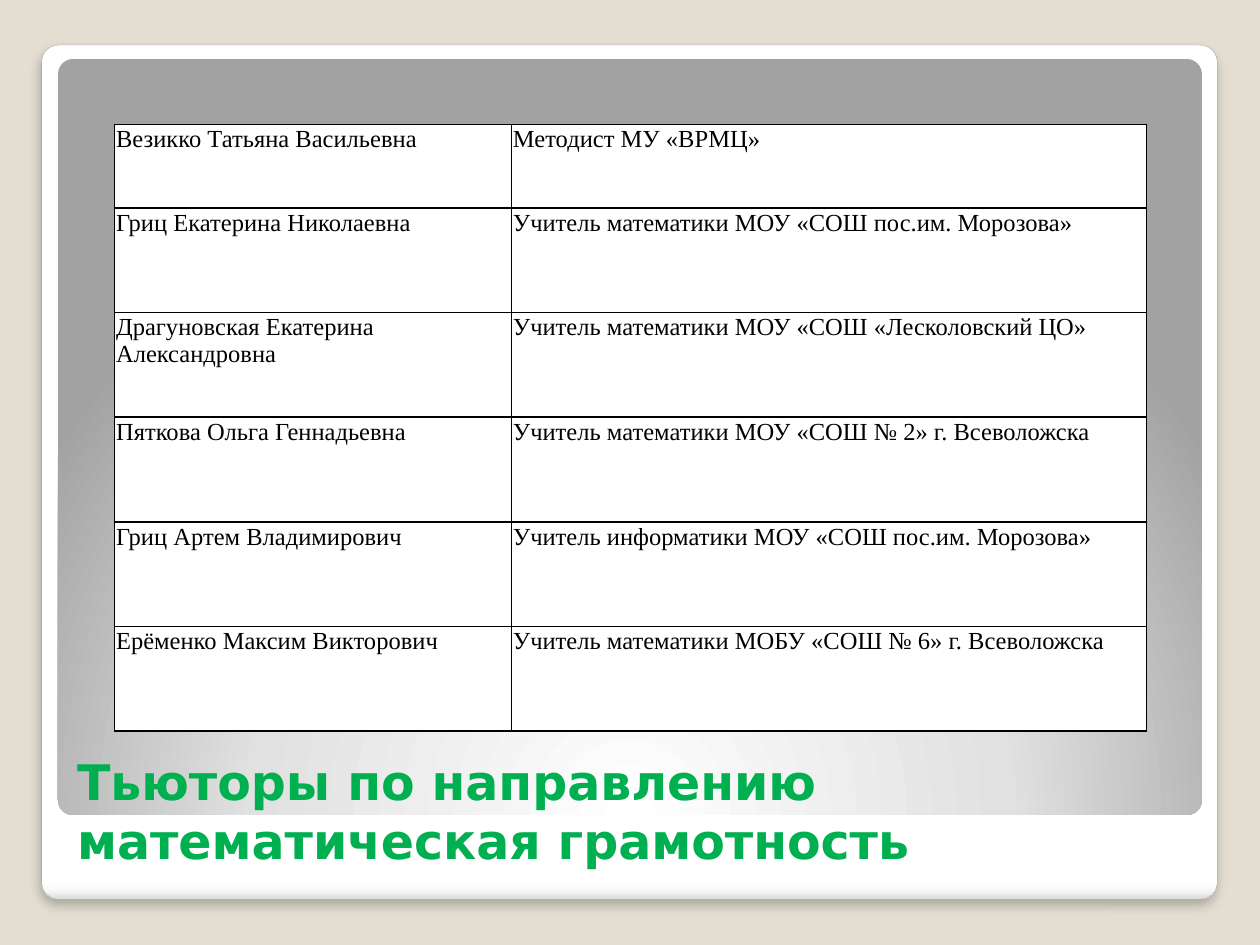
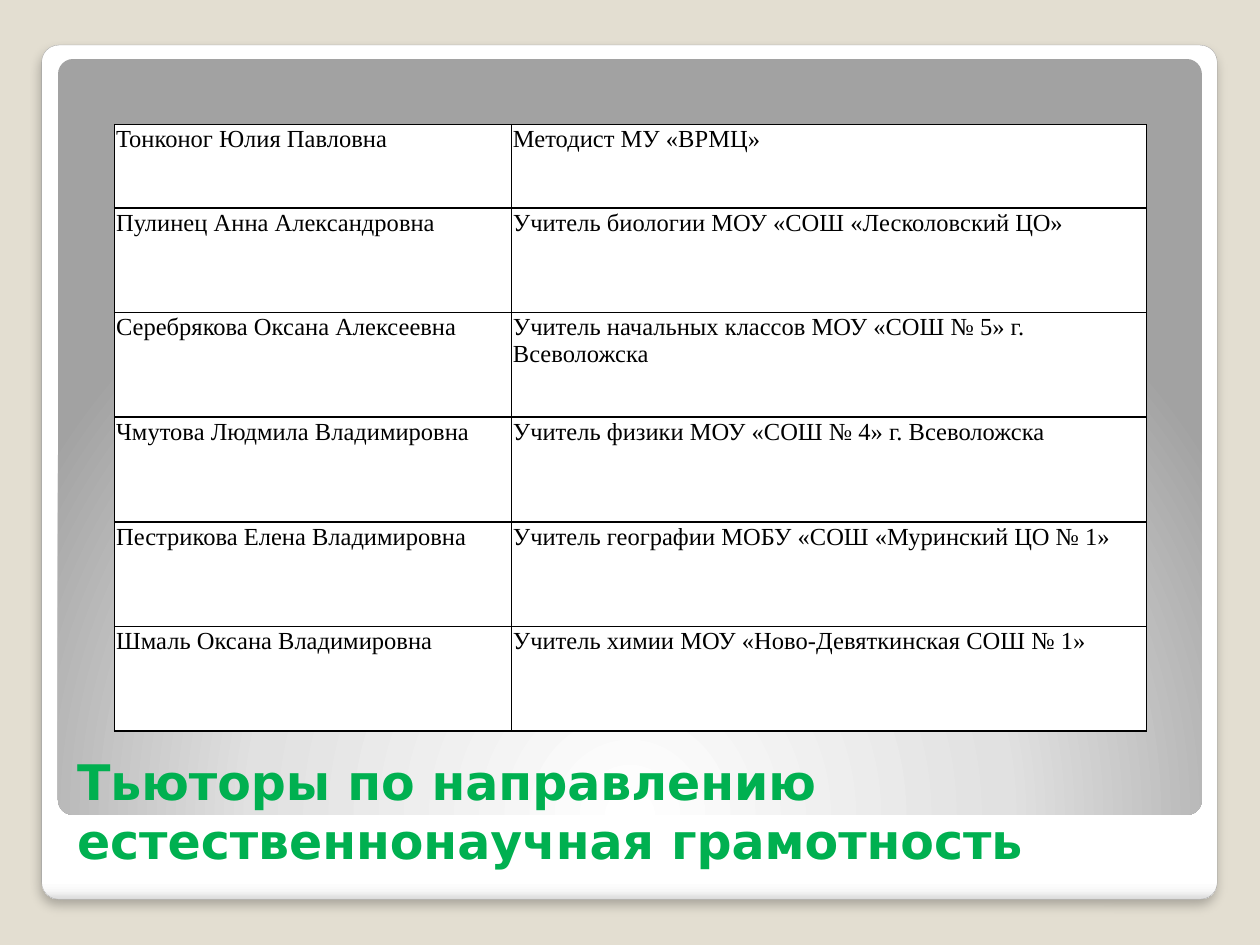
from pptx import Presentation
from pptx.dml.color import RGBColor
from pptx.enum.shapes import MSO_SHAPE
from pptx.enum.text import MSO_ANCHOR, MSO_AUTO_SIZE, PP_ALIGN
from pptx.oxml import parse_xml
from pptx.oxml.ns import nsdecls
from pptx.util import Cm, Pt

# Colours and fonts
SAND = RGBColor(0xE3, 0xDE, 0xD1)
WHITE = RGBColor(0xFF, 0xFF, 0xFF)
PEARL = RGBColor(0xF7, 0xF7, 0xF7)
SILVER = RGBColor(0xDA, 0xDA, 0xDA)
MIST = RGBColor(0xE1, 0xE1, 0xE1)
STONE = RGBColor(0xA2, 0xA2, 0xA2)
EDGE = RGBColor(0xA4, 0xA4, 0xA4)
GREEN = RGBColor(0x00, 0xB0, 0x50)
BLACK = RGBColor(0x00, 0x00, 0x00)
SANS = "DejaVu Sans"
SERIF = "Times New Roman"

# Table grid
COLS = [Cm(8), Cm(12.8)]
ROWS = [Cm(1.68)] + [Cm(2.11)] * 5

# Tutors by subject: name and post
MATHS = [
    ("Везикко Татьяна Васильевна", "Методист МУ «ВРМЦ»"),
    ("Гриц Екатерина Николаевна", "Учитель математики МОУ «СОШ пос.им. Морозова»"),
    ("Драгуновская Екатерина Александровна",
     "Учитель математики МОУ «СОШ «Лесколовский ЦО»"),
    ("Пяткова Ольга Геннадьевна", "Учитель математики МОУ «СОШ № 2» г. Всеволожска"),
    ("Гриц Артем Владимирович", "Учитель информатики МОУ «СОШ пос.им. Морозова»"),
    ("Ерёменко Максим Викторович",
     "Учитель математики МОБУ «СОШ № 6» г. Всеволожска"),
]
SCIENCE = [
    ("Тонконог Юлия Павловна", "Методист МУ «ВРМЦ»"),
    ("Пулинец Анна Александровна", "Учитель биологии МОУ «СОШ «Лесколовский ЦО»"),
    ("Серебрякова Оксана Алексеевна",
     "Учитель начальных классов МОУ «СОШ № 5» г. Всеволожска"),
    ("Чмутова Людмила Владимировна", "Учитель физики МОУ «СОШ № 4» г. Всеволожска"),
    ("Пестрикова Елена Владимировна",
     "Учитель географии МОБУ «СОШ «Муринский ЦО № 1»"),
    ("Шмаль Оксана Владимировна",
     "Учитель химии МОУ «Ново-Девяткинская СОШ № 1»"),
]


def write(frame, text, font=SERIF, size=14, color=BLACK, bold=False):
    """Put one left-aligned paragraph into a text frame."""
    para = frame.paragraphs[0]
    para.alignment = PP_ALIGN.LEFT
    run = para.add_run()
    run.text = text
    run.font.name = font
    run.font.size = Pt(size)
    run.font.color.rgb = color
    run.font.bold = bold


def blend(shape, stops, way):
    """Give a shape a gradient; way is the XML of its direction."""
    marks = "".join(
        f'<a:gs pos="{pos * 1000}"><a:srgbClr val="{color}"/></a:gs>'
        for pos, color in stops)
    shape.fill.background()
    blank = shape.element.spPr.find("{*}noFill")
    blank.getparent().replace(blank, parse_xml(
        f'<a:gradFill {nsdecls("a")} rotWithShape="1">'
        f'<a:gsLst>{marks}</a:gsLst>{way}</a:gradFill>'))


def add_panel(slide, left, top, width, height):
    panel = slide.shapes.add_shape(
        MSO_SHAPE.ROUNDED_RECTANGLE, left, top, width, height)
    panel.adjustments[0] = 0.02
    panel.shadow.inherit = False
    return panel


def add_shade(shape):
    """Add a soft shadow below a shape."""
    shape.element.spPr.find("{*}effectLst").append(parse_xml(
        f'<a:outerShdw {nsdecls("a")} blurRad="{Pt(6)}" dist="{Pt(4)}" '
        f'dir="5400000" algn="t" rotWithShape="0"><a:srgbClr val="{BLACK}">'
        '<a:alpha val="25000"/></a:srgbClr></a:outerShdw>'))


def style_layout(layout, slide):
    """Set background, panels and title place that all slides share."""
    layout.background.fill.solid()
    layout.background.fill.fore_color.rgb = SAND

    # White card
    card = add_panel(slide, Cm(0.84), Cm(0.91), Cm(23.7), Cm(17.22))
    blend(card, [(0, WHITE), (98, WHITE), (99, PEARL), (100, SILVER)],
          '<a:lin ang="5400000" scaled="0"/>')
    card.line.color.rgb = EDGE
    card.line.width = Pt(0.16)
    add_shade(card)

    # Grey panel
    panel = add_panel(slide, Cm(1.17), Cm(1.19), Cm(23.06), Cm(15.24))
    blend(panel, [(0, WHITE), (55, MIST), (100, STONE)],
          '<a:path path="circle"><a:fillToRect l="50000" t="175000" '
          'r="50000" b="-75000"/></a:path>')
    panel.line.fill.background()

    # Both go behind the placeholders of the layout
    for spot, shape in enumerate((card, panel), start=2):
        layout.shapes.element.insert(spot, shape.element)

    title = layout.placeholders[0]
    title.left, title.top = Cm(1.3), Cm(14.73)
    title.width, title.height = Cm(22.73), Cm(2.92)
    title.text_frame.vertical_anchor = MSO_ANCHOR.BOTTOM
    title.text_frame.auto_size = MSO_AUTO_SIZE.NONE


def fill_cell(cell, text):
    cell.margin_left = cell.margin_right = Cm(0.03)
    cell.margin_top = cell.margin_bottom = Cm(0.03)
    cell.fill.solid()
    cell.fill.fore_color.rgb = WHITE
    write(cell.text_frame, text)
    props = cell._tc.get_or_add_tcPr()
    for spot, side in enumerate("LRTB"):
        props.insert(spot, parse_xml(
            f'<a:ln{side} {nsdecls("a")} w="{Pt(1)}"><a:solidFill>'
            f'<a:srgbClr val="{BLACK}"/></a:solidFill></a:ln{side}>'))


def add_grid(slide, people):
    table = slide.shapes.add_table(
        len(people), len(COLS), Cm(2.31), Cm(2.51), sum(COLS), sum(ROWS)).table
    table.first_row = table.horz_banding = False
    for col, width in zip(table.columns, COLS):
        col.width = width
    for row, height, person in zip(table.rows, ROWS, people):
        row.height = height
        for cell, text in zip(row.cells, person):
            fill_cell(cell, text)


def main():
    deck = Presentation()
    deck.slide_width, deck.slide_height = Cm(25.4), Cm(19.05)
    layout = deck.slide_layouts[5]
    topics = [("математическая", MATHS), ("естественнонаучная", SCIENCE)]
    slides = [deck.slides.add_slide(layout) for _ in topics]
    style_layout(layout, slides[0])
    for slide, (topic, people) in zip(slides, topics):
        write(slide.shapes.title.text_frame,
              f"Тьюторы по направлению {topic} грамотность",
              font=SANS, size=28, color=GREEN, bold=True)
        add_grid(slide, people)
    deck.save("out.pptx")


if __name__ == "__main__":
    main()
